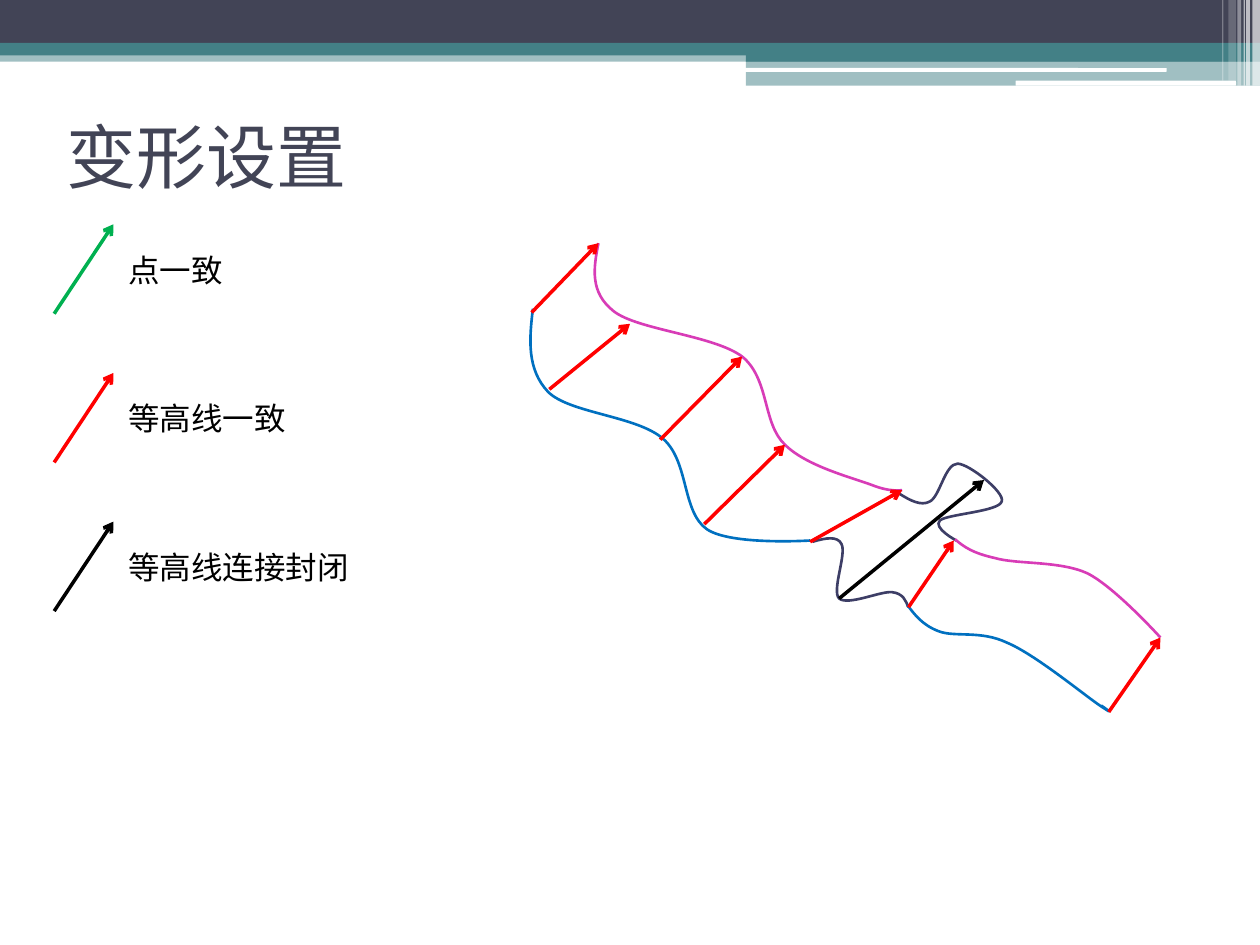
from lxml import etree
from pptx import Presentation
from pptx.dml.color import RGBColor
from pptx.enum.shapes import MSO_CONNECTOR, MSO_SHAPE
from pptx.enum.text import MSO_ANCHOR, MSO_AUTO_SIZE, PP_ALIGN
from pptx.oxml.ns import qn
from pptx.util import Inches, Pt

RECT, ROUND = MSO_SHAPE.RECTANGLE, MSO_SHAPE.ROUNDED_RECTANGLE
STRAIGHT = MSO_CONNECTOR.STRAIGHT
MIDDLE, LEFT = MSO_ANCHOR.MIDDLE, PP_ALIGN.LEFT
TITLE_ONLY = 5

COLORS = {
    "navy": "424456", "teal": "438086", "white": "FFFFFF", "black": "000000",
    "green": "00B050", "red": "FF0000", "blue": "0070C0", "pink": "D83CB7",
    "indigo": "3D3E66",
}


def add_arrow(shapes, start, end, color):
    cx = shapes.add_connector(STRAIGHT, *map(Inches, start + end))
    cx.line.color.rgb = RGBColor.from_string(COLORS[color])
    cx.line.width = Pt(2)
    etree.SubElement(cx.line._get_or_add_ln(), qn("a:tailEnd"), type="arrow")
    etree.SubElement(cx._element.spPr, qn("a:effectLst"))


def set_text(tf, text, size, font, color):
    tf.text = text
    p = tf.paragraphs[0]
    p.alignment = LEFT
    r = p.runs[0]
    r.font.size = Pt(size)
    r.font.name = font
    r.font.color.rgb = RGBColor.from_string(COLORS[color])


prs = Presentation()
prs.slide_width, prs.slide_height = Inches(10), Inches(7.5)
s = prs.slides.add_slide(prs.slide_layouts[TITLE_ONLY])

# Header bands: shape, left, top, width, height, colour, opacity in percent
bands = [
    (RECT, 0, 0.4, 10, 0.09, "teal", 50),
    (RECT, 0, 0, 10, 0.34, "navy", 100),
    (RECT, 0, 0.34, 10, 0.1, "teal", 100),
    (RECT, 5.92, 0.39, 4.08, 0.1, "teal", 100),
    (RECT, 5.92, 0.48, 4.08, 0.2, "teal", 50),
    (ROUND, 5.91, 0.54, 3.35, 0.03, "white", 100),
    (ROUND, 8.06, 0.64, 1.75, 0.04, "white", 100),
    (RECT, 9.94, 0, 0.06, 0.68, "white", 65),
    (RECT, 9.89, 0, 0.03, 0.68, "white", 65),
    (RECT, 9.87, 0, 0.01, 0.68, "white", 60),
    (RECT, 9.82, 0, 0.03, 0.68, "white", 40),
    (RECT, 9.75, 0, 0.06, 0.64, "white", 20),
    (RECT, 9.7, 0, 0.01, 0.64, "white", 30),
]
for kind, x, y, w, h, color, opacity in bands:
    sp = s.shapes.add_shape(kind, Inches(x), Inches(y), Inches(w), Inches(h))
    sp.shadow.inherit = False
    sp.line.fill.background()
    sp.fill.solid()
    sp.fill.fore_color.rgb = RGBColor.from_string(COLORS[color])
    if opacity < 100:
        clr = sp._element.spPr.find(".//" + qn("a:srgbClr"))
        etree.SubElement(clr, qn("a:alpha"), val=str(opacity * 1000))

# Title
title = s.shapes.title
title.left, title.top = Inches(0.43), Inches(0.65)
title.width, title.height = Inches(9), Inches(1.17)
title.text_frame.vertical_anchor = MIDDLE
set_text(title.text_frame, "变形设置", 40, "Cabin", "navy")

# Legend: arrow and label in each row
legend = [("点一致", 0.95, "green"), ("等高线一致", 1.45, "red"),
          ("等高线连接封闭", 1.95, "black")]
for i, (label, width, color) in enumerate(legend):
    y = 1.78 + 1.18 * i
    row = s.shapes.add_group_shape()
    add_arrow(row.shapes, (0.43, y + 0.71), (0.9, y), color)
    box = row.shapes.add_textbox(Inches(0.92), Inches(y + 0.16),
                                 Inches(width), Inches(0.4))
    box.text_frame.word_wrap = False
    box.text_frame.auto_size = MSO_AUTO_SIZE.SHAPE_TO_FIT_TEXT
    set_text(box.text_frame, label, 18, "Arial", "black")

# Contours: colour, bounding box, then a start point followed by
# two control points and an end point per segment
contours = [
    ("blue", (4.21, 2.45, 2.22, 1.85),
     [(4.23, 2.45), (4.2, 2.69), (4.18, 2.93), (4.35, 3.11),
      (4.52, 3.28), (5.05, 3.3), (5.26, 3.48),
      (5.47, 3.66), (5.41, 4.06), (5.61, 4.2),
      (5.8, 4.33), (6.43, 4.29), (6.43, 4.29)]),
    ("pink", (4.72, 1.93, 2.44, 1.96),
     [(4.75, 1.93), (4.71, 2.13), (4.68, 2.32), (4.87, 2.47),
      (5.06, 2.62), (5.66, 2.66), (5.89, 2.83),
      (6.11, 3.01), (6.05, 3.36), (6.23, 3.53),
      (6.4, 3.7), (6.76, 3.79), (6.92, 3.85),
      (7.07, 3.91), (7.16, 3.89), (7.16, 3.89)]),
    ("indigo", (7.14, 3.68, 0.81, 0.62),
     [(7.14, 3.92), (7.22, 3.97), (7.31, 4.02), (7.38, 3.98),
      (7.46, 3.94), (7.5, 3.68), (7.6, 3.68),
      (7.69, 3.68), (7.98, 3.91), (7.95, 3.98),
      (7.93, 4.06), (7.52, 4.08), (7.46, 4.13),
      (7.4, 4.19), (7.59, 4.29), (7.59, 4.29)]),
    ("indigo", (6.45, 4.27, 0.76, 0.54),
     [(6.45, 4.3), (6.55, 4.27), (6.65, 4.25), (6.68, 4.32),
      (6.72, 4.4), (6.6, 4.69), (6.66, 4.75),
      (6.73, 4.81), (6.99, 4.69), (7.08, 4.7),
      (7.17, 4.71), (7.19, 4.77), (7.21, 4.82)]),
    ("pink", (7.58, 4.28, 1.63, 0.78),
     [(7.58, 4.28), (7.65, 4.34), (7.72, 4.39), (7.9, 4.43),
      (8.07, 4.48), (8.41, 4.45), (8.63, 4.55),
      (8.85, 4.66), (9.21, 5.06), (9.21, 5.06)]),
    ("blue", (7.2, 4.8, 1.61, 0.85),
     [(7.2, 4.8), (7.26, 4.88), (7.32, 4.96), (7.45, 5.01),
      (7.58, 5.06), (7.78, 5), (7.99, 5.1),
      (8.21, 5.19), (8.61, 5.52), (8.73, 5.6),
      (8.85, 5.68), (8.8, 5.64), (8.74, 5.6)]),
]
section = s.shapes.add_group_shape()
for color, (x, y, w, h), pts in contours:
    # The box diagonal fixes place and size; Bezier segments replace it
    fb = section.shapes.build_freeform(Inches(x), Inches(y))
    fb.add_line_segments([(Inches(x + w), Inches(y + h))], close=False)
    sp = fb.convert_to_shape()
    outline = sp._element.spPr.find(".//" + qn("a:path"))
    for node in list(outline):
        outline.remove(node)
    for i, (px, py) in enumerate(pts):
        if i == 0:
            seg = etree.SubElement(outline, qn("a:moveTo"))
        elif i % 3 == 1:
            seg = etree.SubElement(outline, qn("a:cubicBezTo"))
        etree.SubElement(seg, qn("a:pt"), x=str(Inches(px - x)),
                         y=str(Inches(py - y)))
    sp.shadow.inherit = False
    sp.fill.background()
    sp.line.color.rgb = RGBColor.from_string(COLORS[color])
    sp.line.width = Pt(1.5)

# Arrows from the lower contour to the upper one
arrows = [
    ((4.22, 2.48), (4.75, 1.93), "red"),
    ((6.43, 4.3), (7.16, 3.89), "red"),
    ((7.21, 4.82), (7.57, 4.29), "red"),
    ((6.66, 4.75), (7.81, 3.81), "black"),
    ((8.8, 5.65), (9.21, 5.06), "red"),
    ((5.24, 3.49), (5.89, 2.83), "red"),
    ((4.36, 3.09), (5, 2.57), "red"),
    ((5.59, 4.16), (6.23, 3.53), "red"),
]
for start, end, color in arrows:
    add_arrow(section.shapes, start, end, color)

prs.save("out.pptx")
